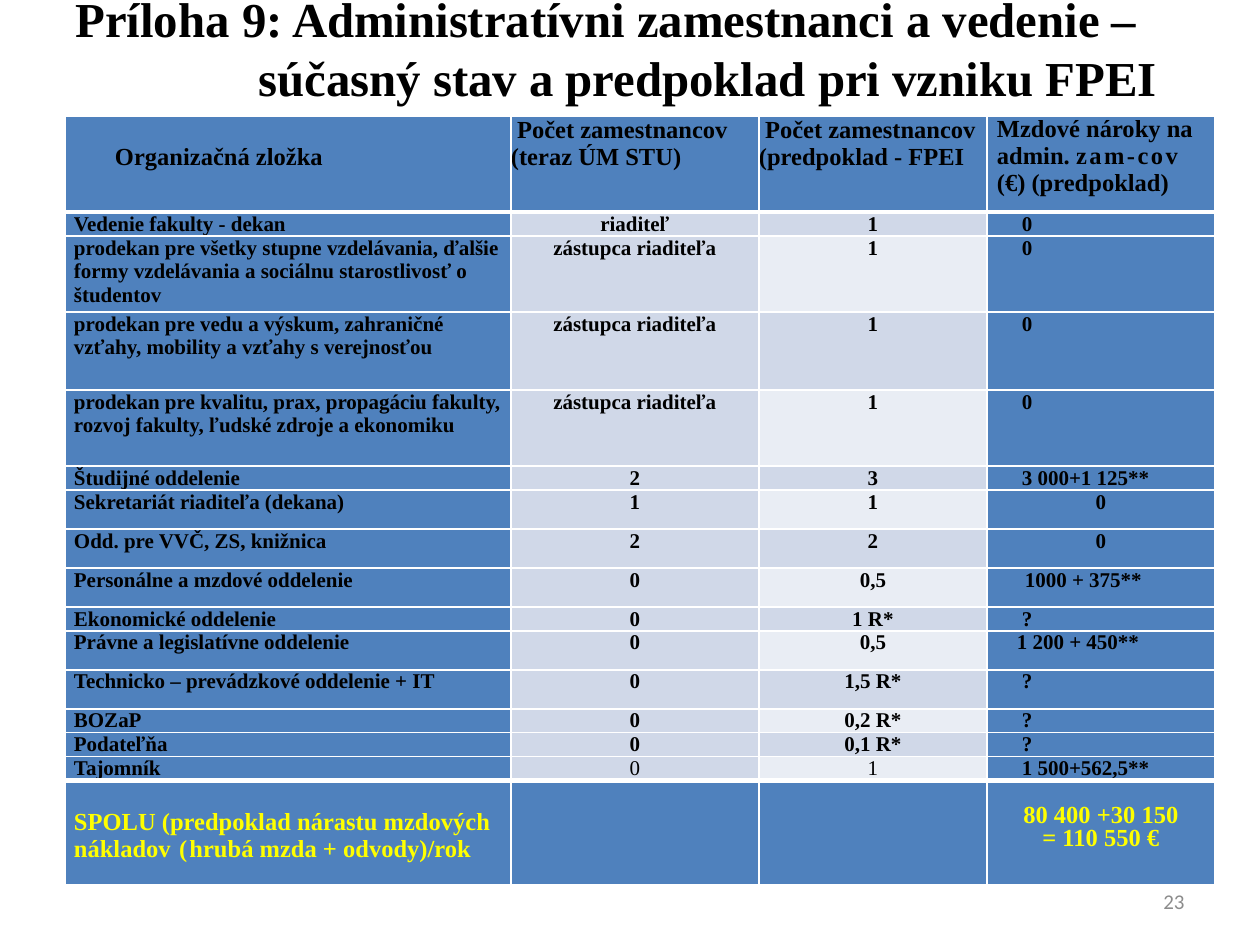
import pptx
import pptx.util
import pptx.dml.color
import pptx.enum.text
import pptx.oxml.ns
import lxml.etree

PX = 914400 / 126
SERIF = "Times New Roman"
BLACK, YELLOW, WHITE, GREY = "000000", "FFFF00", "FFFFFF", "8C8C8C"
BLUE, LIGHT, PALE = "4F81BD", "D0D8E8", "E9EDF4"
LEFT, CENTER, RIGHT = (getattr(pptx.enum.text.PP_ALIGN, n) for n in ("LEFT", "CENTER", "RIGHT"))

TITLE = [  # text, indent
    ("Príloha 9: Administratívni zamestnanci a vedenie –", 0),
    ("súčasný stav a predpoklad pri vzniku FPEI", 183),
]
COLS = [446, 248, 228, 228]
ROWS = [96, 24, 76, 78, 76, 24, 39, 39, 39, 24, 39, 39, 24, 24, 24, 104]

# A cell holds lines; a line holds (text, letter spacing) runs.
HEADER = [  # lines, left margin, top margin
    ([[("Organizačná zložka", 0)]], 50, 28),
    ([[("\u00a0Počet zamestnancov (teraz ÚM STU)", 0)]], 0, 1),
    ([[("\u00a0Počet zamestnancov (predpoklad - FPEI", 0)]], 0, 1),
    ([[("Mzdové nároky na admin. ", 0), ("zam-cov ", 1.4), ("(€) (predpoklad)", 0)]], 10, 0),
]
BODY = [  # unit, staff now, staff planned, wage claim, left margin of claim (None: centred)
    ("Vedenie fakulty - dekan", "riaditeľ", "1", "0", 35),
    ("prodekan pre všetky stupne vzdelávania, ďalšie formy vzdelávania a sociálnu "
     "starostlivosť o študentov", "zástupca riaditeľa", "1", "0", 35),
    ("prodekan pre vedu a výskum, zahraničné vzťahy, mobility a vzťahy s verejnosťou",
     "zástupca riaditeľa", "1", "0", 35),
    ("prodekan pre kvalitu, prax, propagáciu fakulty, rozvoj fakulty, ľudské zdroje "
     "a ekonomiku", "zástupca riaditeľa", "1", "0", 35),
    ("Študijné oddelenie", "2", "3", "3 000+1 125**", 35),
    ("Sekretariát riaditeľa (dekana)", "1", "1", "0", None),
    ("Odd. pre VVČ, ZS, knižnica", "2", "2", "0", None),
    ("Personálne a mzdové oddelenie", "0", "0,5", "1000 + 375**", 38),
    ("Ekonomické oddelenie", "0", "1 R*", "?", 35),
    ("Právne a legislatívne oddelenie", "0", "0,5", "1 200 + 450**", 30),
    ("Technicko – prevádzkové oddelenie + IT", "0", "1,5 R*", "?", 35),
    ("BOZaP", "0", "0,2 R*", "?", 35),
    ("Podateľňa", "0", "0,1 R*", "?", 35),
    ("Tajomník", "0", "1", "1 500+562,5**", 35),
]
TOTAL_LABEL = [[("SPOLU (predpoklad nárastu mzdových nákladov", 0), (" (", 1.2),
                ("hrubá mzda + odvody)/rok", 0)]]
TOTAL_VALUE = [[("80 400 +30 150", 0)], [("= 110 550 €", 0)]]


def px(n):
    return pptx.util.Emu(round(n * PX))


def rgb(color):
    return pptx.dml.color.RGBColor.from_string(color)


def add_run(p, text, size, color=BLACK, bold=True, name=SERIF, spacing=0):
    r = p.add_run()
    r.text = text
    for key, value in dict(size=pptx.util.Pt(size), bold=bold, name=name).items():
        setattr(r.font, key, value)
    r.font.color.rgb = rgb(color)
    if spacing:
        r._r.get_or_add_rPr().set("spc", str(round(spacing * 100)))


def set_borders(cell, top, bottom):
    """Draw white edges; widths are in points, and the fill must be set later."""
    tcPr = cell._tc.get_or_add_tcPr()
    for side, width in dict(L=1, R=1, T=top, B=bottom).items():
        ln = lxml.etree.SubElement(tcPr, pptx.oxml.ns.qn("a:ln" + side), w=str(width * 12700))
        fill = lxml.etree.SubElement(ln, pptx.oxml.ns.qn("a:solidFill"))
        lxml.etree.SubElement(fill, pptx.oxml.ns.qn("a:srgbClr"), val=WHITE)


def fill_cell(cell, lines, fill, left=0, top=0, size=12, align=LEFT, leading=None,
              color=BLACK, bold=True, edges=(1, 1)):
    margins = dict(margin_left=left, margin_top=top, margin_right=0, margin_bottom=0)
    for key, value in margins.items():
        setattr(cell, key, px(value))
    set_borders(cell, *edges)
    cell.fill.solid()
    cell.fill.fore_color.rgb = rgb(fill)
    tf = cell.text_frame
    for i, line in enumerate(lines):
        p = tf.add_paragraph() if i else tf.paragraphs[0]
        p.alignment = align
        if leading:
            p.line_spacing = pptx.util.Pt(leading)
        for text, spacing in line:
            add_run(p, text, size, color, bold, spacing=spacing)


def add_title(s):
    sp = s.shapes.title
    sp.left, sp.top, sp.width, sp.height = px(63), px(0), px(1134), px(116)
    tf = sp.text_frame
    tf.word_wrap = True
    tf.auto_size = pptx.enum.text.MSO_AUTO_SIZE.NONE
    tf.vertical_anchor = pptx.enum.text.MSO_ANCHOR.BOTTOM
    tf.margin_top, tf.margin_bottom = 0, px(10)
    for i, (text, indent) in enumerate(TITLE):
        p = tf.add_paragraph() if i else tf.paragraphs[0]
        p.alignment = LEFT
        p.line_spacing = pptx.util.Pt(33.4)
        p.space_before = pptx.util.Pt(0)
        p._p.get_or_add_pPr().set("marL", str(px(indent)))
        add_run(p, text, 27.9)


def add_staff_table(s):
    table = s.shapes.add_table(len(ROWS), len(COLS), px(65), px(116),
                               px(sum(COLS)), px(sum(ROWS))).table
    for col, width in zip(table.columns, COLS):
        col.width = px(width)
    for row, height in zip(table.rows, ROWS):
        row.height = px(height)

    for c, (lines, left, top) in enumerate(HEADER):
        fill_cell(table.cell(0, c), lines, BLUE, left, top, size=14, edges=(1, 3))

    last = len(BODY)
    for r, (unit, now, planned, claim, left) in enumerate(BODY, 1):
        edges = (3 if r == 1 else 1, 3 if r == last else 1)
        styles = [
            (unit, dict(fill=BLUE, left=9)),
            (now, dict(fill=LIGHT, align=CENTER, bold=r != last)),
            (planned, dict(fill=LIGHT if r % 2 else PALE, align=CENTER, bold=r != last)),
            (claim, dict(fill=BLUE, left=left or 0, align=CENTER if left is None else LEFT)),
        ]
        for c, (text, style) in enumerate(styles):
            fill_cell(table.cell(r, c), [[(text, 0)]], leading=13.6, edges=edges, **style)

    total = dict(fill=BLUE, size=14, color=YELLOW, edges=(3, 1))
    r = last + 1
    fill_cell(table.cell(r, 0), TOTAL_LABEL, left=9, top=28, **total)
    for c in (1, 2):
        fill_cell(table.cell(r, c), [], **total)
    fill_cell(table.cell(r, 3), TOTAL_VALUE, top=24, align=CENTER, leading=13.6, **total)


def add_page_number(s):
    tf = s.shapes.add_textbox(px(903), px(876), px(294), px(50)).text_frame
    tf.word_wrap = True
    tf.vertical_anchor = pptx.enum.text.MSO_ANCHOR.MIDDLE
    p = tf.paragraphs[0]
    p.alignment = RIGHT
    add_run(p, "23", 12, GREY, bold=False, name="Calibri")


def main():
    prs = pptx.Presentation()
    prs.slide_width, prs.slide_height = px(1260), px(945)
    s = prs.slides.add_slide(prs.slide_layouts[5])
    add_title(s)
    add_staff_table(s)
    add_page_number(s)
    prs.save("out.pptx")


if __name__ == "__main__":
    main()
